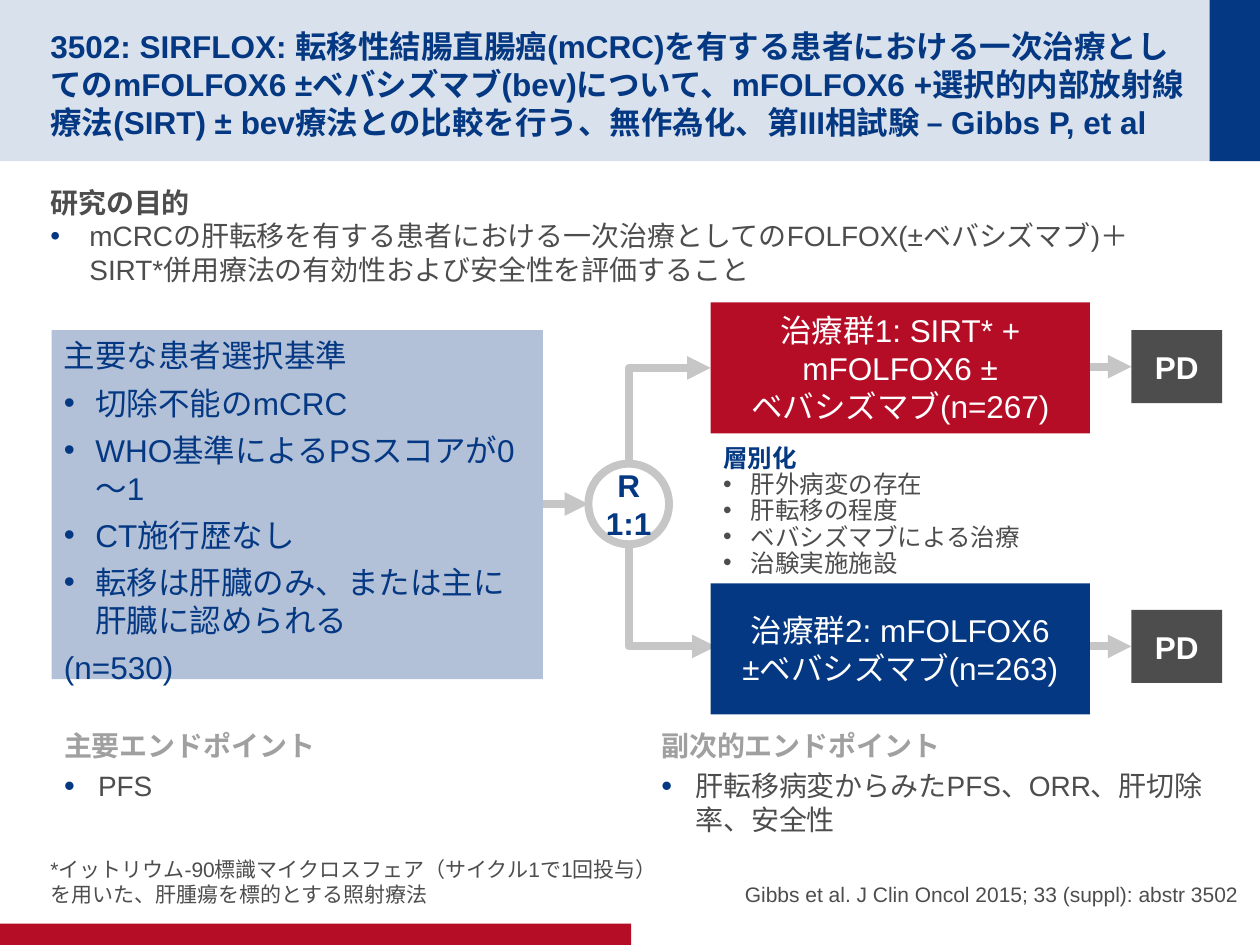
"""Build the trial design slide with two treatment arms."""
from lxml.etree import SubElement
from pptx import Presentation
from pptx.dml.color import RGBColor
from pptx.enum.shapes import MSO_CONNECTOR as Link, MSO_SHAPE as Kind
from pptx.enum.text import MSO_ANCHOR as Anchor, PP_ALIGN as Align
from pptx.oxml.ns import qn
from pptx.util import Inches, Pt

HUES = {"navy": "043882", "red": "B60D27", "dark": "4D4D4D", "grey": "A0A0A0",
        "line": "C6C6C6", "pale": "B2C0D8", "white": "FFFFFF"}
INK = {name: RGBColor.from_string(code) for name, code in HUES.items()}
PAD = (0.1, 0.05, 0.1, 0.05)
FLAT = (0.1, 0, 0.1, 0)

deck = Presentation()
deck.slide_width, deck.slide_height = Inches(10), Inches(7.5)
slide = deck.slides.add_slide(deck.slide_layouts[6])


def put(kind, at, fill=None, rows=(), size=18, align=Align.LEFT,
        anchor=Anchor.TOP, pad=PAD, after=0, lead=None):
    """Add a shape or text box; a row is text, hue, bold, indent, bullet hue, bullet size."""
    spot = [Inches(n) for n in at]
    if kind is None:
        shape = slide.shapes.add_textbox(*spot)
    else:
        shape = slide.shapes.add_shape(kind, *spot)
        shape.shadow.inherit = False
        shape.line.fill.background()
        if fill:
            shape.fill.solid()
            shape.fill.fore_color.rgb = INK[fill]
        else:
            shape.fill.background()
    frame = shape.text_frame
    frame.word_wrap = True
    frame.vertical_anchor = anchor
    (frame.margin_left, frame.margin_top,
     frame.margin_right, frame.margin_bottom) = [Inches(n) for n in pad]
    for i, (text, hue, bold, dent, dot, scale) in enumerate(rows):
        para = frame.add_paragraph() if i else frame.paragraphs[0]
        para.text = text
        para.alignment = align
        para.space_after = Pt(after)
        if lead:
            para.line_spacing = Pt(lead)
        font = para.font
        font.name, font.size, font.bold = "Arial", Pt(size), bold
        font.color.rgb = INK[hue]
        if dent:
            props = para._p.get_or_add_pPr()
            props.set("marL", str(Inches(dent)))
            props.set("indent", str(-Inches(dent)))
            if dot:
                tint = SubElement(props, qn("a:buClr"))
                SubElement(tint, qn("a:srgbClr"), val=HUES[dot])
                SubElement(props, qn("a:buSzPct"), val=str(scale * 1000))
                SubElement(props, qn("a:buFont"), typeface="Arial")
                SubElement(props, qn("a:buChar"), char="•")
                late = props.find(qn("a:defRPr"))
                props.remove(late)
                props.append(late)
    return shape


def join(kind, *ends):
    """Add a grey arrow between two points."""
    arrow = slide.shapes.add_connector(kind, *[Inches(n) for n in ends])
    arrow.line.color.rgb = INK["line"]
    arrow.line.width = Pt(4.5)
    SubElement(arrow.line._get_or_add_ln(), qn("a:tailEnd"), type="triangle")
    SubElement(arrow._element.spPr, qn("a:effectLst"))
    return arrow


band = put(Kind.RECTANGLE, (0, 0, 10, 1.28), "navy")
tint = band._element.spPr.find(qn("a:solidFill"))[0]
SubElement(tint, qn("a:alpha"), val="15000")
put(Kind.RECTANGLE, (9.6, 0, 0.4, 1.28), "navy")
put(Kind.RECTANGLE, (0, 7.33, 5.01, 0.17), "red")

title = ("3502: SIRFLOX: 転移性結腸直腸癌(mCRC)を有する患者における一次治療としての"
         "mFOLFOX6 ±ベバシズマブ(bev)について、mFOLFOX6 +選択的内部放射線療法(SIRT) "
         "± bev療法との比較を行う、無作為化、第III相試験 – Gibbs P, et al")
put(None, (0.4, 0.2, 9.09, 0.88), rows=[(title, "navy", True, 0, None, 100)],
    anchor=Anchor.MIDDLE, pad=(0, 0.05, 0, 0))

goal = ("mCRCの肝転移を有する患者における一次治療としてのFOLFOX(±ベバシズマブ)＋"
        "SIRT*併用療法の有効性および安全性を評価すること")
put(None, (0.4, 1.42, 9.19, 0.9), size=16, pad=(0, 0.05, 0.1, 0.05),
    rows=[("研究の目的", "dark", True, 0, None, 100),
          (goal, "dark", False, 0.31, "navy", 100)])

notes = [
    (0.4, 4.91, Align.LEFT,
     "*イットリウム-90標識マイクロスフェア（サイクル1で1回投与）を用いた、肝腫瘍を標的とする照射療法"),
    (5.08, 4.75, Align.RIGHT, "Gibbs et al. J Clin Oncol 2015; 33 (suppl): abstr 3502"),
]
for left, wide, side, text in notes:
    put(None, (left, 6.67, wide, 0.53), rows=[(text, "dark", False, 0, None, 100)],
        size=12, align=side, anchor=Anchor.BOTTOM, pad=(0, 0, 0, 0), after=4)

split = put(Kind.OVAL, (4.67, 3.68, 0.64, 0.64), align=Align.CENTER, anchor=Anchor.MIDDLE,
            rows=[(text, "navy", True, 0, None, 100) for text in ("R", "1:1")])
split.text_frame.word_wrap = False
split.line.color.rgb = INK["line"]
split.line.width = Pt(4.5)
join(Link.STRAIGHT, 3.45, 4, 4.67, 4)

arms = [
    ("red", 2.4, 2.62, 3.68, (5.64, 2.92), 90,
     ["治療群1: SIRT* + mFOLFOX6 ±", "ベバシズマブ(n=267)"]),
    ("navy", 4.63, 4.84, 4.34, (5.68, 5.13), 270,
     ["治療群2: mFOLFOX6 ±ベバシズマブ(n=263)"]),
]
for hue, top, stop, start, (tip, level), turn, texts in arms:
    mid, half = (4.99 + tip) / 2, abs(level - start) / 2
    rise, run = (start + level) / 2, (tip - 4.99) / 2
    sign = 1 if turn == 90 else -1
    bend = join(Link.ELBOW, mid + half, rise + sign * run, mid - half, rise - sign * run)
    bend._element.spPr.find(qn("a:prstGeom")).set("prst", "bentConnector2")
    bend._element.spPr.find(qn("a:xfrm")).set("rot", str(turn * 60000))
    axis = stop + 0.29
    out = join(Link.STRAIGHT, 8.35, axis, 8.98, axis)
    put(Kind.RECTANGLE, (5.64, top, 3.01, 1.04), hue, align=Align.CENTER,
        anchor=Anchor.MIDDLE, pad=FLAT,
        rows=[(text, "white", False, 0, None, 100) for text in texts])
    end = put(Kind.RECTANGLE, (8.98, stop, 0.72, 0.58), "dark", align=Align.CENTER,
              anchor=Anchor.MIDDLE, pad=FLAT, rows=[("PD", "white", True, 0, None, 100)])
    out.end_connect(end, 1)

needs = ["切除不能のmCRC", "WHO基準によるPSスコアが0～1", "CT施行歴なし",
         "転移は肝臓のみ、または主に肝臓に認められる"]
panel = put(Kind.ROUNDED_RECTANGLE, (0.41, 2.62, 3.9, 2.77), "pale", after=5.4,
            rows=[("主要な患者選択基準", "navy", False, 0, None, 100),
                  *[(text, "navy", False, 0.25, "navy", 100) for text in needs],
                  ("(n=530)", "navy", False, 0, None, 100)])
panel.adjustments[0] = 0

strata = ["肝外病変の存在", "肝転移の程度", "ベバシズマブによる治療", "治験実施施設"]
put(None, (5.64, 3.49, 4.3, 0.99), size=14, lead=15,
    rows=[("層別化", "navy", True, 0.21, None, 100),
          *[(text, "dark", False, 0.22, "dark", 100) for text in strata]])

goals = [(0.41, "主要エンドポイント", "PFS"),
         (5.15, "副次的エンドポイント", "肝転移病変からみたPFS、ORR、肝切除率、安全性")]
for left, head, text in goals:
    put(None, (left, 5.73, 4.52, 1.07), size=16, after=4,
        rows=[(head, "grey", True, 0, None, 100),
              (text, "dark", False, 0.27, "navy", 110)])

deck.save("out.pptx")
